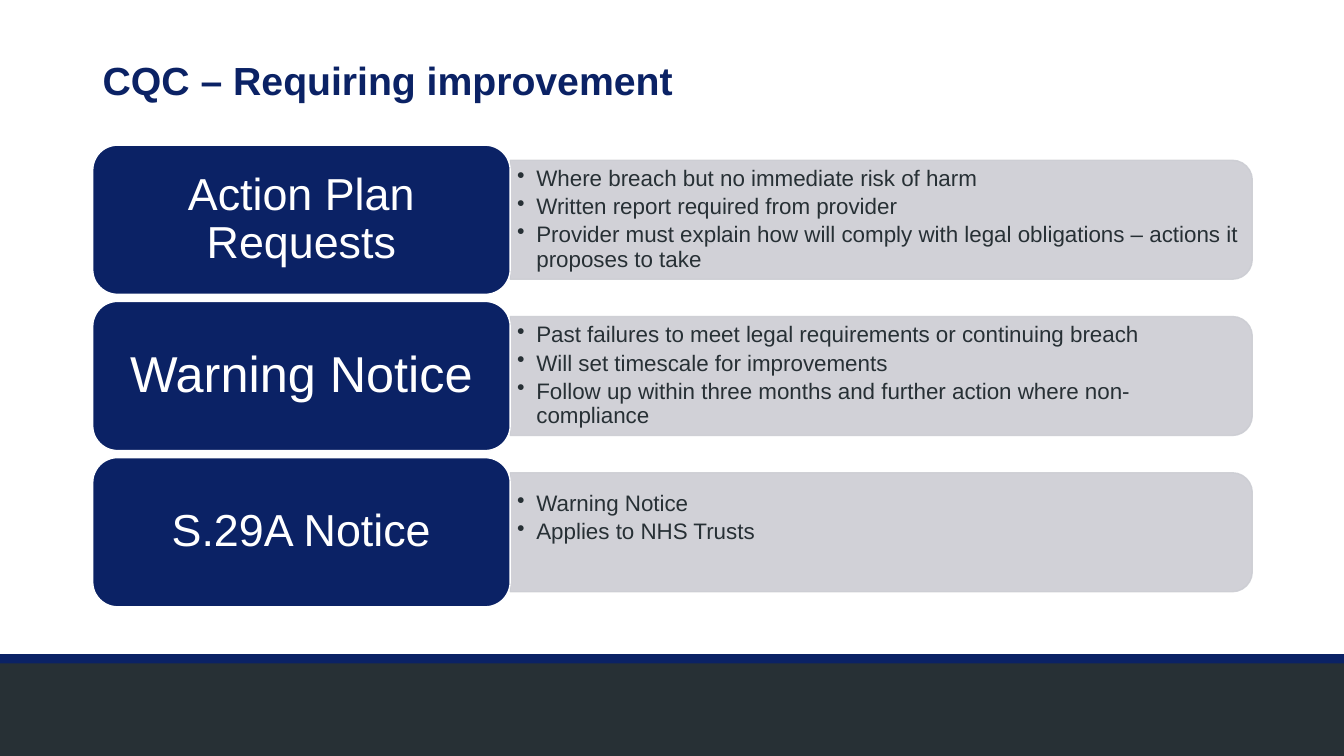
from dataclasses import dataclass

from lxml.etree import SubElement
from pptx import Presentation
from pptx.dml.color import RGBColor
from pptx.enum.shapes import MSO_SHAPE as Preset
from pptx.enum.text import MSO_ANCHOR as Anchor, PP_ALIGN as Align
from pptx.oxml.ns import qn
from pptx.util import Inches, Pt

TITLE = "CQC – Requiring improvement"
ACTIONS = [
    ("Action Plan Requests", 32, [
        "Where breach but no immediate risk of harm",
        "Written report required from provider",
        "Provider must explain how will comply with legal obligations – actions it proposes to take",
    ]),
    ("Warning Notice", 36, [
        "Past failures to meet legal requirements or continuing breach",
        "Will set timescale for improvements",
        "Follow up within three months and further action where non-compliance",
    ]),
    ("S.29A Notice", 32, [
        "Warning Notice",
        "Applies to NHS Trusts",
    ]),
]


@dataclass(frozen=True)
class Theme:
    font: str = "Arial"
    navy: str = "0B2265"
    slate: str = "273035"
    panel: str = "CCCDD3"
    white: str = "FFFFFF"
    panel_opacity: int = 90
    title_size: int = 28
    bullet_size: int = 16


THEME = Theme()
SLIDE_WIDTH, SLIDE_HEIGHT = 13.33, 7.5
LEFT, TOP = 0.92, 1.44
LABEL_WIDTH, LABEL_HEIGHT, ROW_PITCH = 4.14, 1.48, 1.55
PANEL_WIDTH, PANEL_HEIGHT = 7.36, 1.18
BULLET_WIDTH, BULLET_HEIGHT = 7.3, 1.07
BULLET_INDENT, BULLET_LINE = 0.19, 0.27
FULL_BULLETS = 3


def set_opacity(color_format, percent):
    color = color_format._xFill.find(qn("a:srgbClr"))
    SubElement(color, qn("a:alpha"), val=str(percent * 1000))


def add_block(slide, preset, box, fill, line=None, opacity=None):
    shape = slide.shapes.add_shape(preset, *map(Inches, box))
    shape.shadow.inherit = False
    shape.fill.solid()
    shape.fill.fore_color.rgb = RGBColor.from_string(fill)
    if line:
        shape.line.width = Pt(1)
        shape.line.color.rgb = RGBColor.from_string(line)
    else:
        shape.line.fill.background()
    if opacity:
        for color in shape._element.spPr.iter(qn("a:srgbClr")):
            SubElement(color, qn("a:alpha"), val=str(opacity * 1000))
    return shape


def add_text_box(slide, box):
    return slide.shapes.add_textbox(*map(Inches, box)).text_frame


def write(frame, lines, size, color, margins, align=Align.LEFT, bold=False, bulleted=False):
    frame.word_wrap = True
    frame.vertical_anchor = Anchor.MIDDLE
    frame.margin_left, frame.margin_top, frame.margin_right, frame.margin_bottom = map(Inches, margins)
    frame.text = "\n".join(lines)
    for paragraph in frame.paragraphs:
        if bulleted:
            properties = paragraph._p.get_or_add_pPr()
            properties.set("marL", str(Inches(BULLET_INDENT)))
            properties.set("indent", str(-Inches(BULLET_INDENT)))
            SubElement(properties, qn("a:buChar"), char="•")
            paragraph.space_after = Pt(2.8)
        paragraph.alignment = align
        paragraph.line_spacing = 0.9
        for run in paragraph.runs:
            run.font.name = THEME.font
            run.font.size = Pt(size)
            run.font.bold = bold
            run.font.color.rgb = RGBColor.from_string(color)


def add_action(slide, row, label, label_size, bullets):
    top = TOP + row * ROW_PITCH
    middle = top + LABEL_HEIGHT / 2
    right = LEFT + LABEL_WIDTH

    panel_left = right + (PANEL_WIDTH - PANEL_HEIGHT) / 2
    panel_box = (panel_left, middle - PANEL_WIDTH / 2, PANEL_HEIGHT, PANEL_WIDTH)
    panel = add_block(slide, Preset.ROUND_2_SAME_RECTANGLE, panel_box,
                      THEME.panel, THEME.panel, THEME.panel_opacity)
    panel.rotation = 90

    frame = add_text_box(slide, (right, middle - BULLET_HEIGHT / 2, BULLET_WIDTH, BULLET_HEIGHT))
    spare = (FULL_BULLETS - len(bullets)) * BULLET_LINE
    write(frame, bullets, THEME.bullet_size, THEME.slate,
          (0.07, 0.03, 0.07, 0.03 + spare), bulleted=True)

    block = add_block(slide, Preset.ROUNDED_RECTANGLE, (LEFT, top, LABEL_WIDTH, LABEL_HEIGHT),
                      THEME.navy, THEME.white)
    write(block.text_frame, [label], label_size, THEME.white,
          (0.2, 0.14, 0.2, 0.14), Align.CENTER)


def main():
    presentation = Presentation()
    presentation.slide_width = Inches(SLIDE_WIDTH)
    presentation.slide_height = Inches(SLIDE_HEIGHT)
    slide = presentation.slides.add_slide(presentation.slide_layouts[6])

    add_block(slide, Preset.RECTANGLE, (0, 6.57, SLIDE_WIDTH, 0.93), THEME.slate)
    add_block(slide, Preset.RECTANGLE, (0, 6.49, SLIDE_WIDTH, 0.09), THEME.navy)
    write(add_text_box(slide, (LEFT, 0.4, 11.5, 0.85)), [TITLE], THEME.title_size,
          THEME.navy, (0.1, 0.05, 0.1, 0.05), bold=True)
    for row, action in enumerate(ACTIONS):
        add_action(slide, row, *action)

    presentation.save("out.pptx")


if __name__ == "__main__":
    main()
